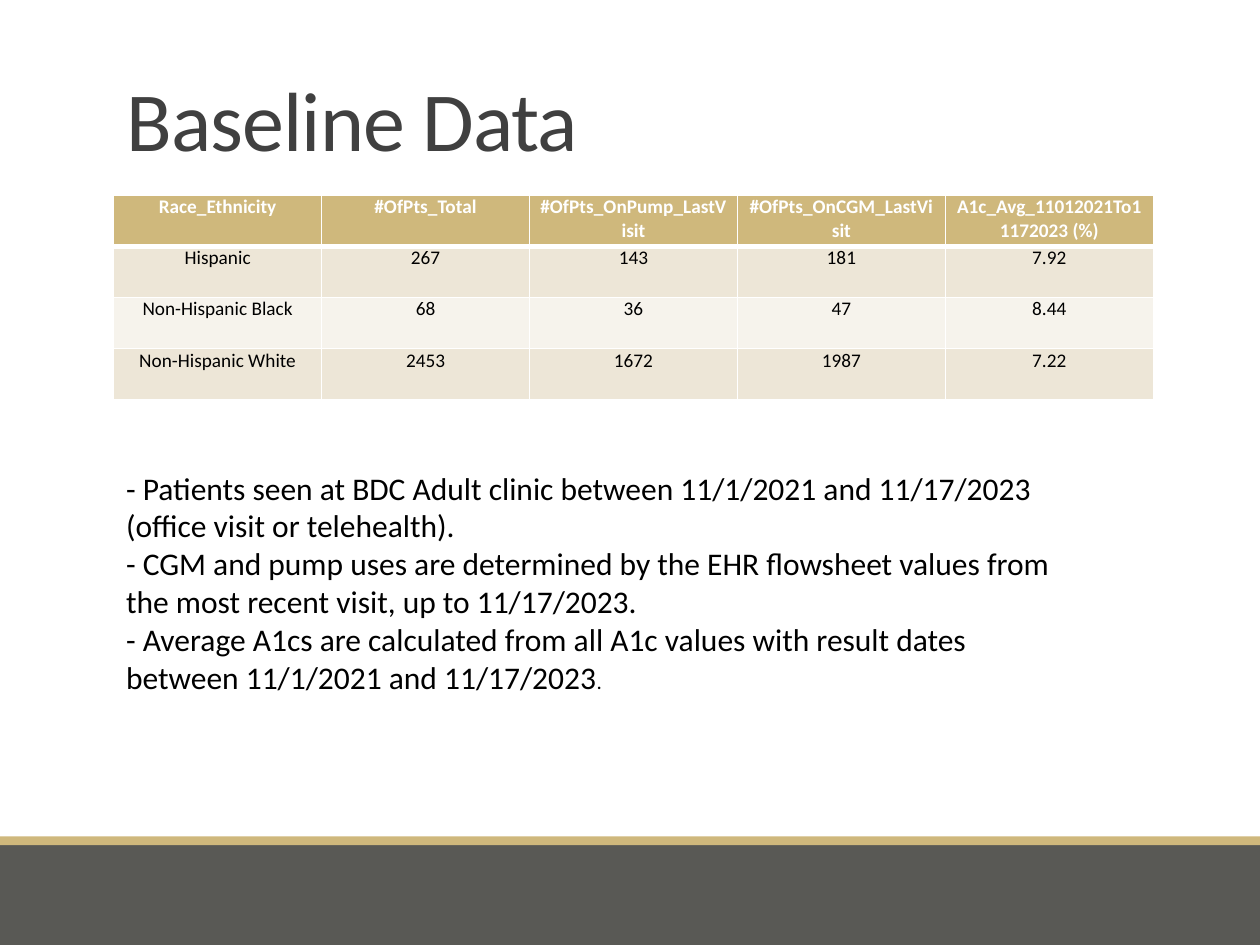
"""Build the Baseline Data slide: a table by race and ethnicity with notes."""
from dataclasses import dataclass

from lxml.etree import SubElement, fromstring
from pptx import Presentation
from pptx.dml.color import RGBColor
from pptx.enum.shapes import MSO_SHAPE as Shape
from pptx.enum.text import MSO_ANCHOR as Anchor, MSO_AUTO_SIZE as AutoSize, PP_ALIGN as Align
from pptx.oxml.ns import nsdecls
from pptx.util import Pt


@dataclass(frozen=True)
class Theme:
    font: str = "Calibri"
    gold: str = "CFB87C"
    slate: str = "595955"
    heading: str = "404040"
    ink: str = "000000"
    white: str = "FFFFFF"
    bands: tuple = ("EDE6D7", "F6F3EC")
    title_size: int = 48
    table_size: int = 11
    note_size: int = 18
    stop_size: int = 12


theme = Theme()


def write(paragraph, text, *, size, color, bold=False, align=Align.LEFT):
    paragraph.alignment = align
    run = paragraph.add_run()
    run.text = text
    run.font.name = theme.font
    run.font.size = Pt(size)
    run.font.bold = bold
    run.font.color.rgb = RGBColor.from_string(color)
    return run


def set_borders(cell, widths):
    properties = cell._tc.get_or_add_tcPr()
    for position, (side, width) in enumerate(widths.items()):
        border = fromstring(f'<a:ln{side} {nsdecls("a")} w="{Pt(width)}"/>')
        fill = SubElement(border, f"{{{border.nsmap['a']}}}solidFill")
        SubElement(fill, f"{{{border.nsmap['a']}}}srgbClr", val=theme.white)
        properties.insert(position, border)


deck = Presentation()
deck.slide_width, deck.slide_height = Pt(720), Pt(540)
slide = deck.slides.add_slide(deck.slide_layouts[5])

for top, height, color in [(483, 57, theme.slate), (478, 5, theme.gold)]:
    band = slide.shapes.add_shape(Shape.RECTANGLE, 0, Pt(top), Pt(720), Pt(height))
    band.shadow.inherit = False
    band.fill.solid()
    band.fill.fore_color.rgb = RGBColor.from_string(color)
    band.line.fill.background()

title = slide.shapes.title
title.left, title.top, title.width, title.height = Pt(65), Pt(22.5), Pt(594), Pt(77.5)
title.text_frame.vertical_anchor = Anchor.BOTTOM
title.text_frame.auto_size = AutoSize.NONE
heading = title.text_frame.paragraphs[0]
heading.line_spacing = 0.85
heading_run = write(heading, "Baseline Data", size=theme.title_size, color=theme.heading)
heading_run.font._element.set("spc", "-50")

baseline_rows = [
    ("Race_Ethnicity", "#OfPts_Total", "#OfPts_OnPump_LastVisit",
     "#OfPts_OnCGM_LastVisit", "A1c_Avg_11012021To11172023 (%)"),
    ("Hispanic", "267", "143", "181", "7.92"),
    ("Non-Hispanic Black", "68", "36", "47", "8.44"),
    ("Non-Hispanic White", "2453", "1672", "1987", "7.22"),
]
baseline = slide.shapes.add_table(4, 5, Pt(65), Pt(111.6), Pt(594), Pt(116.8)).table
for column in baseline.columns:
    column.width = Pt(118.8)
for row_index, values in enumerate(baseline_rows):
    is_header = row_index == 0
    baseline.rows[row_index].height = Pt(29.2)
    cell_color = theme.gold if is_header else theme.bands[(row_index - 1) % 2]
    for column_index, value in enumerate(values):
        cell = baseline.cell(row_index, column_index)
        cell.margin_left = cell.margin_right = Pt(5)
        cell.margin_top = cell.margin_bottom = 0
        cell.fill.solid()
        cell.fill.fore_color.rgb = RGBColor.from_string(cell_color)
        set_borders(cell, {"L": 1, "R": 1, "T": 3 if row_index == 1 else 1,
                           "B": 3 if is_header else 1})
        write(cell.text_frame.paragraphs[0], value, size=theme.table_size,
              color=theme.white if is_header else theme.ink,
              bold=is_header, align=Align.CENTER)

notes = [
    "- Patients seen at BDC Adult clinic between 11/1/2021 and 11/17/2023 "
    "(office visit or telehealth).",
    "- CGM and pump uses are determined by the EHR flowsheet values from "
    "the most recent visit, up to 11/17/2023.",
    "- Average A1cs are calculated from all A1c values with result dates "
    "between 11/1/2021 and 11/17/2023",
]
method = slide.shapes.add_textbox(Pt(65), Pt(264.2), Pt(548), Pt(138.2)).text_frame
method.word_wrap = True
method.auto_size = AutoSize.SHAPE_TO_FIT_TEXT
for index, note in enumerate(notes):
    line = method.add_paragraph() if index else method.paragraphs[0]
    write(line, note, size=theme.note_size, color=theme.ink)
write(line, ".", size=theme.stop_size, color=theme.ink)

deck.save("out.pptx")
